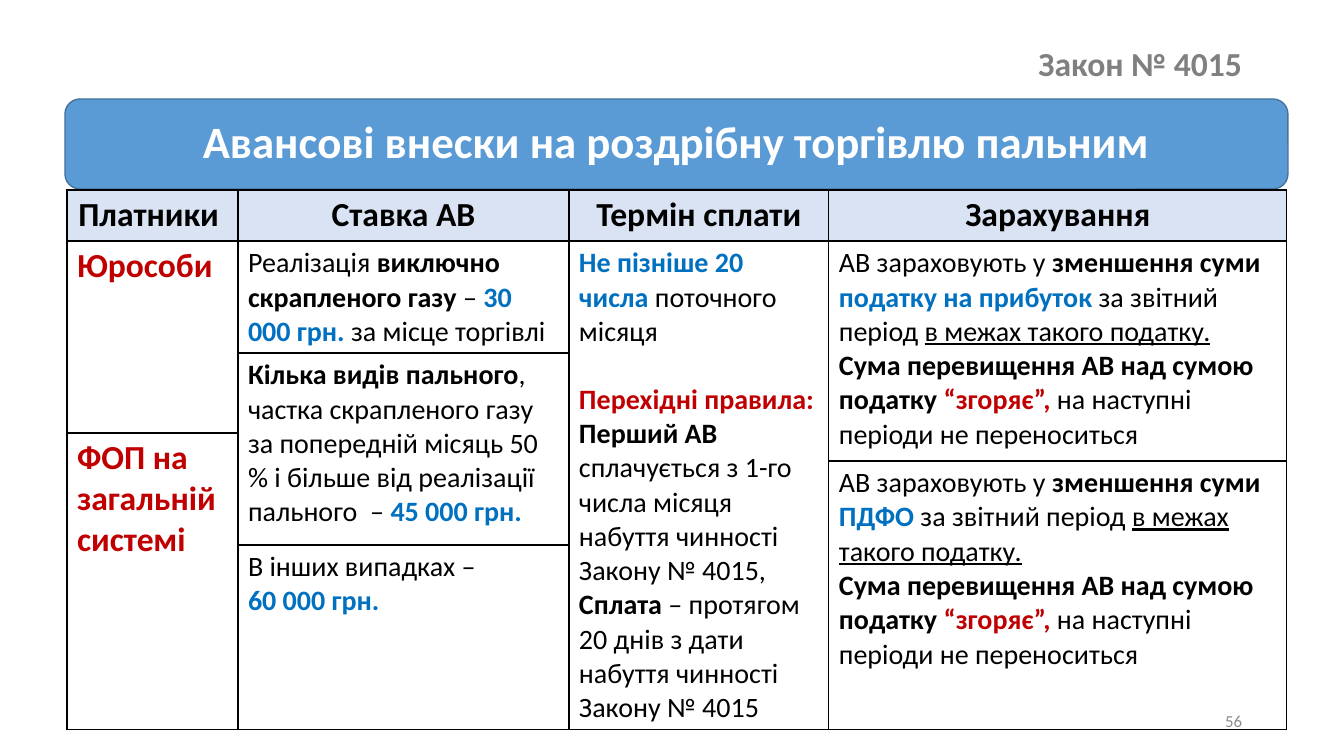
from dataclasses import dataclass
from itertools import product

from lxml.etree import SubElement
from pptx import Presentation
from pptx.dml.color import RGBColor
from pptx.enum.shapes import MSO_SHAPE as Shape
from pptx.enum.text import MSO_ANCHOR as Anchor, PP_ALIGN as Align
from pptx.oxml.ns import qn
from pptx.util import Emu, Pt


@dataclass(frozen=True)
class Theme:
    font: str = "Calibri"
    black: str = "000000"
    white: str = "FFFFFF"
    red: str = "C00000"
    blue: str = "0070C0"
    grey: str = "808080"
    pale_grey: str = "8C8C8C"
    banner: str = "5B9BD5"
    banner_edge: str = "43739E"
    header: str = "DAE3F3"
    banner_size: int = 32
    heading_size: int = 24
    body_size: int = 20
    number_size: int = 12
    paragraph_gap: int = 24


THEME = Theme()
PLAIN = (THEME.black, False, False)
BOLD = (THEME.black, True, False)
UNDERLINED = (THEME.black, False, True)
BLUE = (THEME.blue, True, False)
RED = (THEME.red, True, False)
WHITE = (THEME.white, True, False)
GREY = (THEME.grey, True, False)
NUMBER = (THEME.pale_grey, False, False)


def px(length):
    return Emu(round(length * 914400 / 100.8))


class SlideBuilder:
    """Draws styled elements on one page, with lengths in px."""

    def __init__(self, page, theme):
        self.page = page
        self.theme = theme

    def set_text(self, frame, paragraphs, size, align=Align.LEFT, spacing=1.0):
        frame.word_wrap = True
        for index, spans in enumerate(paragraphs):
            para = frame.add_paragraph() if index else frame.paragraphs[0]
            para.alignment = align
            para.line_spacing = spacing
            for text, (color, bold, underline) in spans:
                span = para.add_run()
                span.text = text
                font = span.font
                font.name, font.size = self.theme.font, Pt(size)
                font.bold, font.underline = bold, underline
                font.color.rgb = RGBColor.from_string(color)

    def label(self, box, text, style, size, spacing=1.0):
        frame = self.page.shapes.add_textbox(*map(px, box)).text_frame
        frame.vertical_anchor = Anchor.MIDDLE
        self.set_text(frame, [[(text, style)]], size, Align.RIGHT, spacing)

    def banner(self, box, text):
        shape = self.page.shapes.add_shape(Shape.ROUNDED_RECTANGLE, *map(px, box))
        shape.shadow.inherit = False
        shape.fill.solid()
        shape.fill.fore_color.rgb = RGBColor.from_string(self.theme.banner)
        shape.line.color.rgb = RGBColor.from_string(self.theme.banner_edge)
        shape.line.width = Pt(1)
        shape.text_frame.vertical_anchor = Anchor.MIDDLE
        self.set_text(shape.text_frame, [[(text, WHITE)]],
                      self.theme.banner_size, Align.CENTER, 0.9)

    def border(self, cell):
        properties = cell._tc.get_or_add_tcPr()
        for index, side in enumerate(("lnL", "lnR", "lnT", "lnB")):
            line = SubElement(properties, qn(f"a:{side}"), w=str(Pt(1)))
            fill = SubElement(line, qn("a:solidFill"))
            SubElement(fill, qn("a:srgbClr"), val=self.theme.black)
            properties.insert(index, line)

    def table(self, left, top, widths, heights):
        box = (left, top, sum(widths), sum(heights))
        table = self.page.shapes.add_table(
            len(heights), len(widths), *map(px, box)).table
        table.first_row = table.horz_banding = False
        for column, width in zip(table.columns, widths):
            column.width = px(width)
        for row, height in zip(table.rows, heights):
            row.height = px(height)
        for row, column in product(range(len(heights)), range(len(widths))):
            cell = table.cell(row, column)
            if row:
                cell.fill.background()
            else:
                cell.fill.solid()
                cell.fill.fore_color.rgb = RGBColor.from_string(self.theme.header)
            self.border(cell)
        return table

    def cell(self, table, row, column, rows, paragraphs, size, align=Align.LEFT):
        cell = table.cell(row, column)
        if rows > 1:
            cell.merge(table.cell(row + rows - 1, column))
        self.set_text(cell.text_frame, paragraphs, size, align)
        return cell


def offset_rules(tax):
    return [
        [("АВ зараховують у ", PLAIN), ("зменшення суми ", BOLD), (tax, BLUE),
         ("за звітний період ", PLAIN), ("в межах такого податку.", UNDERLINED)],
        [("Сума перевищення АВ над сумою податку ", BOLD), ("“згоряє”, ", RED),
         ("на наступні періоди не переноситься", PLAIN)],
    ]


HEADERS = ["Платники ", "Ставка АВ", "Термін сплати", "Зарахування"]
PAYERS = [(1, 2, "Юрособи"), (3, 3, "ФОП на загальній системі")]
RATES = [
    (1, 1, [[("Реалізація ", PLAIN), ("виключно скрапленого газу ", BOLD),
             ("– ", PLAIN), ("30 000 грн. ", BLUE), ("за місце торгівлі", PLAIN)]]),
    (2, 3, [[("Кілька видів пального", BOLD),
             (", частка скрапленого газу за попередній місяць 50 % і більше "
              "від реалізації пального  – ", PLAIN), ("45 000 грн.", BLUE)]]),
    (5, 1, [[("В інших випадках –", PLAIN)], [("60 000 грн.", BLUE)]]),
]
DEADLINES = [
    [("Не пізніше 20 числа ", BLUE), ("поточного місяця", PLAIN)],
    [("Перехідні правила:", RED)],
    [("Перший АВ ", BOLD),
     ("сплачується з 1-го числа місяця набуття чинності Закону № 4015, ", PLAIN),
     ("Сплата", BOLD),
     (" – протягом 20 днів з дати набуття чинності Закону № 4015", PLAIN)],
]
OFFSETS = [(1, 3, offset_rules("податку на прибуток ")),
           (4, 2, offset_rules("ПДФО "))]


def main():
    deck = Presentation()
    deck.slide_width, deck.slide_height = px(1344), px(756)
    page = deck.slides.add_slide(deck.slide_layouts[6])
    slide = SlideBuilder(page, THEME)

    slide.label((931, 40, 321, 51), "Закон № 4015", GREY, THEME.heading_size, 0.9)
    slide.label((950, 701, 302, 40), "56", NUMBER, THEME.number_size)
    slide.banner((65, 99, 1223, 90), "Авансові внески на роздрібну торгівлю пальним")

    table = slide.table(67, 190, (171, 331, 260, 458), (51, 112, 80, 28, 84, 185))
    for column, title in enumerate(HEADERS):
        slide.cell(table, 0, column, 1, [[(title, BOLD)]],
                   THEME.heading_size, Align.CENTER)
    for row, rows, payer in PAYERS:
        slide.cell(table, row, 0, rows, [[(payer, RED)]], THEME.heading_size)
    for column, entries in ((1, RATES), (3, OFFSETS)):
        for row, rows, paragraphs in entries:
            slide.cell(table, row, column, rows, paragraphs, THEME.body_size)
    deadline = slide.cell(table, 1, 2, 5, DEADLINES, THEME.body_size)
    deadline.vertical_anchor = Anchor.MIDDLE
    deadline.text_frame.paragraphs[1].space_before = Pt(THEME.paragraph_gap)

    deck.save("out.pptx")


if __name__ == "__main__":
    main()
